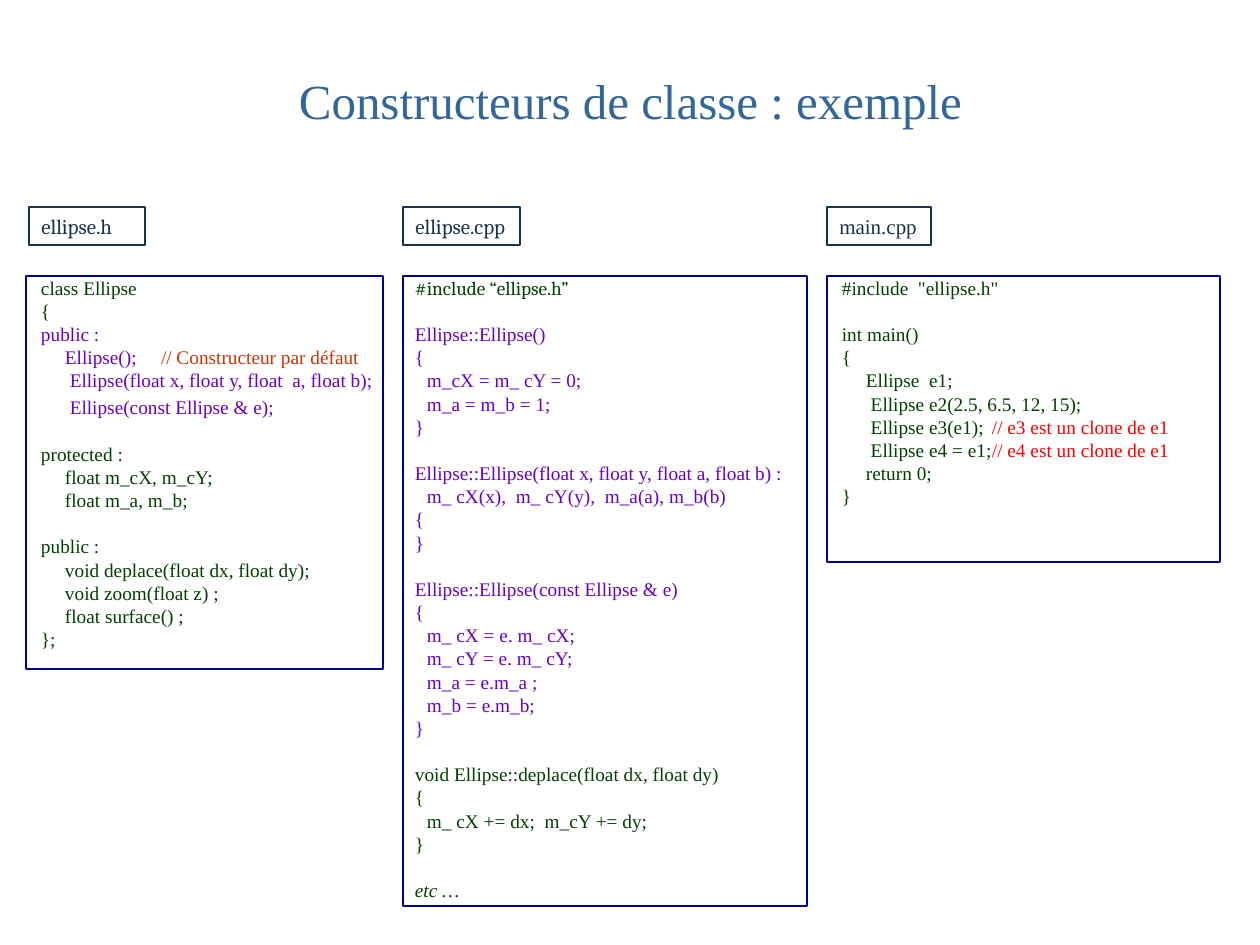
from dataclasses import dataclass

from lxml.etree import SubElement
from pptx import Presentation
from pptx.dml.color import RGBColor
from pptx.enum.shapes import MSO_SHAPE as SHAPE
from pptx.enum.text import MSO_ANCHOR as ANCHOR, PP_ALIGN as ALIGN
from pptx.oxml.ns import qn
from pptx.util import Pt

PX = 914400 // 126
LINE_PITCH = 13.25
SERIF, LABEL_SERIF = "Times New Roman", "Cambria"
COLORS = {
    "title": "336699",
    "label": "19334D",
    "border": "000099",
    "code": "004000",
    "constructor": "6600CC",
    "default_note": "CC3300",
    "clone_note": "FF0000",
}


@dataclass(frozen=True)
class Line:
    text: str
    color: str = "code"
    note: str = ""
    note_color: str = "clone_note"
    before: float = 0  # points
    font: str = SERIF
    italic: bool = False


@dataclass(frozen=True)
class Panel:
    left: int
    width: int
    height: int
    margin: int
    hanging: int
    tabs: tuple[int, ...]
    lines: tuple[Line, ...]


@dataclass(frozen=True)
class Label:
    left: int
    width: int
    text: str
    font: str


def ctor(text: str, before: float = 0) -> Line:
    """A line of code that belongs to a constructor."""
    return Line(text, "constructor", before=before)


GAP = LINE_PITCH
WIDE_TABS = (300, 400, 500, 600, 700)

SOURCE_LINES = (
    Line("#include “ellipse.h”", font=LABEL_SERIF),
    ctor("Ellipse::Ellipse()", GAP),
    ctor("{"),
    ctor("\tm_cX = m_ cY = 0;"),
    ctor("\tm_a = m_b = 1;"),
    ctor("}"),
    ctor("Ellipse::Ellipse(float x, float y, float a, float b) : "
         "m_ cX(x),  m_ cY(y),  m_a(a), m_b(b)", GAP),
    ctor("{"),
    ctor("}"),
    ctor("Ellipse::Ellipse(const Ellipse & e)", GAP),
    ctor("{"),
    ctor("\tm_ cX = e. m_ cX;"),
    ctor("\tm_ cY = e. m_ cY;"),
    ctor("\tm_a = e.m_a ;"),
    ctor("\tm_b = e.m_b;"),
    ctor("}"),
    Line("void Ellipse::deplace(float dx, float dy)", before=GAP),
    Line("{"),
    Line("\tm_ cX += dx;  m_cY += dy;"),
    Line("}"),
    Line("etc …", before=GAP, italic=True),
)

MAIN_LINES = (
    Line('#include  "ellipse.h"'),
    Line("int main()", before=GAP),
    Line("{"),
    Line("\tEllipse  e1;"),
    Line("\t Ellipse e2(2.5, 6.5, 12, 15);"),
    Line("\t Ellipse e3(e1);\t", note="// e3 est un clone de e1"),
    Line("\t Ellipse e4 = e1;\t", note="// e4 est un clone de e1"),
    Line("\treturn 0;"),
    Line("}"),
)

HEADER_LINES = (
    Line("class Ellipse"),
    Line("{"),
    ctor("public :"),
    Line("\tEllipse();     ", "constructor", "// Constructeur par défaut", "default_note"),
    ctor("\t Ellipse(float x, float y, float  a, float b);"),
    ctor("\t Ellipse(const Ellipse & e);", 2.2),
    Line("protected :", before=GAP),
    Line("\tfloat m_cX, m_cY;"),
    Line("\tfloat m_a, m_b;"),
    Line("public :", before=GAP),
    Line("\tvoid deplace(float dx, float dy);"),
    Line("\tvoid zoom(float z) ;"),
    Line("\tfloat surface() ;"),
    Line("};"),
)

PANELS = (
    Panel(403, 404, 630, 24, 12, (37, 62, 87) + WIDE_TABS, SOURCE_LINES),
    Panel(827, 393, 286, 39, 24, (39, 100, 200) + WIDE_TABS, MAIN_LINES),
    Panel(26, 357, 393, 39, 24, (39, 100, 200) + WIDE_TABS, HEADER_LINES),
)

LABELS = (
    Label(29, 116, "ellipse.h", LABEL_SERIF),
    Label(403, 117, "ellipse.cpp", LABEL_SERIF),
    Label(827, 104, "main.cpp", SERIF),
)


def rgb(name: str) -> RGBColor:
    return RGBColor.from_string(COLORS[name])


def format_run(r, size: float, color: str, font: str = SERIF) -> None:
    r.font.size = Pt(size)
    r.font.name = font
    r.font.color.rgb = rgb(color)


def add_frame(slide, left: int, top: int, width: int, height: int, color: str):
    """Draw an unfilled rectangle with a thin border."""
    sp = slide.shapes.add_shape(
        SHAPE.RECTANGLE, left * PX, top * PX, width * PX, height * PX)
    sp.shadow.inherit = False
    sp.fill.background()
    sp.line.color.rgb = rgb(color)
    sp.line.width = Pt(0.75)
    return sp


def set_indent(p, panel: Panel) -> None:
    pPr = p._p.get_or_add_pPr()
    pPr.set("marL", str(panel.margin * PX))
    pPr.set("indent", str(-panel.hanging * PX))
    tab_list = SubElement(pPr, qn("a:tabLst"))
    for tab in panel.tabs:
        SubElement(tab_list, qn("a:tab"), pos=str(tab * PX), algn="l")


def add_panel(slide, panel: Panel) -> None:
    sp = add_frame(slide, panel.left, 276, panel.width, panel.height, "border")
    tf = sp.text_frame
    tf.word_wrap = True
    tf.vertical_anchor = ANCHOR.TOP
    tf.margin_left = tf.margin_top = tf.margin_right = tf.margin_bottom = 0
    for i, line in enumerate(panel.lines):
        p = tf.add_paragraph() if i else tf.paragraphs[0]
        p.alignment = ALIGN.LEFT
        p.line_spacing = Pt(LINE_PITCH)
        p.space_before = Pt(line.before)
        set_indent(p, panel)
        for text, color in ((line.text, line.color), (line.note, line.note_color)):
            if text:
                r = p.add_run()
                r.text = text
                format_run(r, 11, color, line.font)
                r.font.italic = line.italic


def add_label(slide, label: Label) -> None:
    tf = add_frame(slide, label.left, 207, label.width, 38, "label").text_frame
    tf.text = label.text
    tf.word_wrap = False
    tf.vertical_anchor = ANCHOR.MIDDLE
    p = tf.paragraphs[0]
    p.alignment = ALIGN.LEFT
    format_run(p.runs[0], 12, "label", label.font)


def add_title(slide, text: str) -> None:
    sp = slide.shapes.title
    sp.left, sp.top, sp.width, sp.height = (n * PX for n in (95, 21, 1071, 158))
    tf = sp.text_frame
    tf.text = text
    tf.vertical_anchor = ANCHOR.MIDDLE
    p = tf.paragraphs[0]
    p.alignment = ALIGN.CENTER
    format_run(p.runs[0], 28, "title")


def main() -> None:
    prs = Presentation()
    prs.slide_width, prs.slide_height = 1260 * PX, 945 * PX
    slide = prs.slides.add_slide(prs.slide_layouts[5])
    add_title(slide, "Constructeurs de classe : exemple")
    for panel in PANELS:
        add_panel(slide, panel)
    for label in LABELS:
        add_label(slide, label)
    prs.save("out.pptx")


if __name__ == "__main__":
    main()
